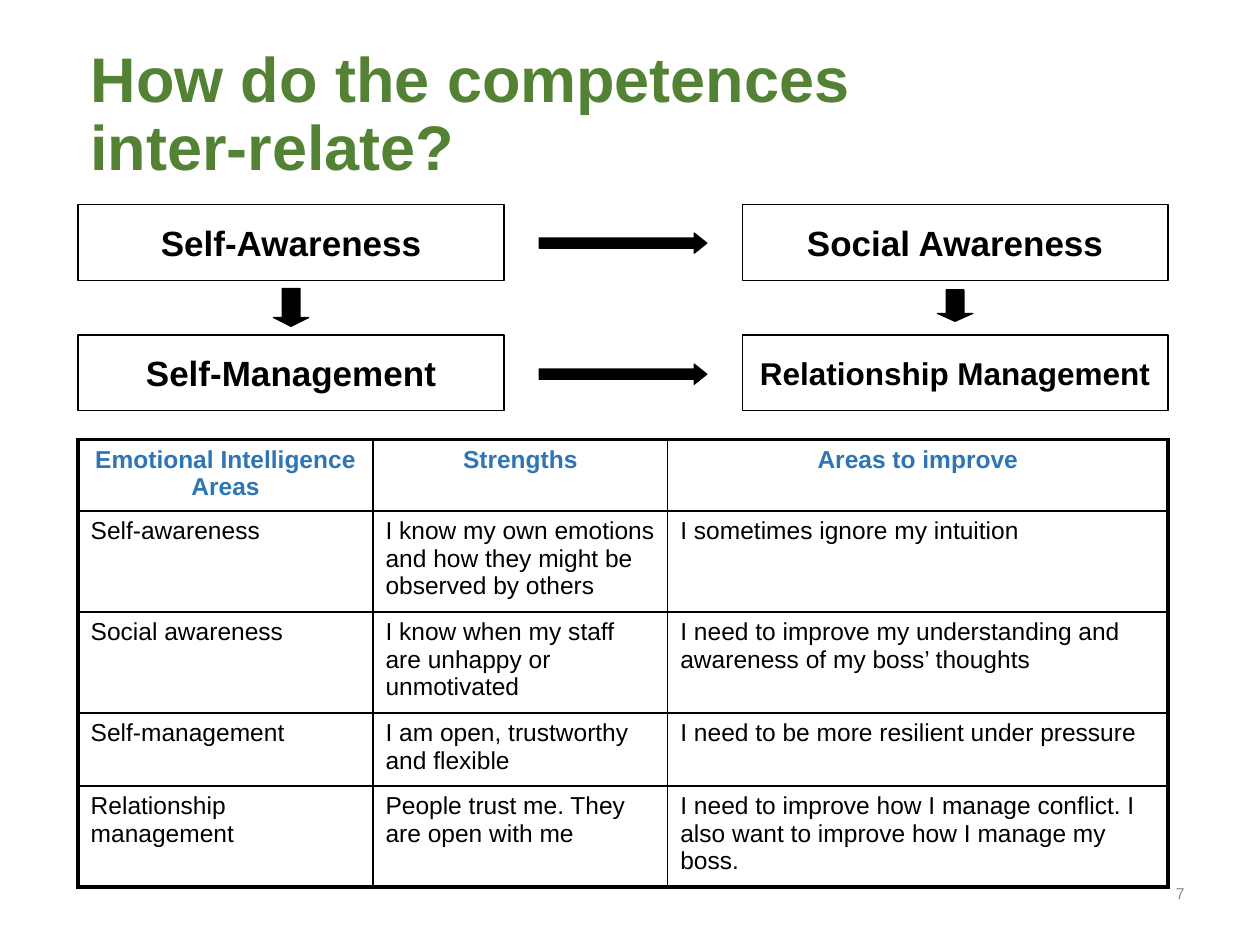
from lxml import etree
from pptx import Presentation
from pptx import util as u
from pptx.dml import color
from pptx.enum import shapes, text
from pptx.oxml import ns

deck = Presentation()
deck.slide_width, deck.slide_height = u.Inches(10), u.Inches(7.5)
page = deck.slides.add_slide(deck.slide_layouts[6])

# Grid of 100 columns by 75 rows, with square units
UNIT = deck.slide_width // 100
BLACK = "000000"
LEFT, RIGHT, BOX_WIDTH, BOX_HEIGHT = 6.2, 58.9, 33.8, 6
UPPER, LOWER = 16.25, 26.6
ALIGN = text.PP_ALIGN


def grid(*lengths):
    return [round(length * UNIT) for length in lengths]


def write(frame, words, size, tint, bold=False, align=ALIGN.LEFT):
    frame.text = words
    para = frame.paragraphs[0]
    para.alignment = align
    for span in para.runs:
        span.font.name, span.font.size, span.font.bold = "Arial", u.Pt(size), bold
        span.font.color.rgb = color.RGBColor.from_string(tint)
    return para


# Page number and title
for place, words, size, tint, bold, align, spacing in [
    ((71.7, 68.3, 23.3, 5.2), "7", 9, "8C8C8C", False, ALIGN.RIGHT, 1.0),
    ((6.2, 5.2, 68.2, 8.1), "How do the competences inter-relate?", 36, "548235", True, ALIGN.LEFT, 0.9),
]:
    box = page.shapes.add_textbox(*grid(*place))
    box.text_frame.word_wrap = True
    box.text_frame.vertical_anchor = text.MSO_ANCHOR.MIDDLE
    write(box.text_frame, words, size, tint, bold, align).line_spacing = spacing

# Competence boxes and the arrows between them
PROCESS = shapes.MSO_SHAPE.FLOWCHART_PROCESS
ACROSS, DOWN = shapes.MSO_SHAPE.RIGHT_ARROW, shapes.MSO_SHAPE.DOWN_ARROW
for kind, place, words, size in [
    (PROCESS, (LEFT, UPPER, BOX_WIDTH, BOX_HEIGHT), "Self-Awareness", 20),
    (PROCESS, (RIGHT, UPPER, BOX_WIDTH, BOX_HEIGHT), "Social Awareness", 20),
    (PROCESS, (LEFT, LOWER, BOX_WIDTH, BOX_HEIGHT), "Self-Management", 20),
    (PROCESS, (RIGHT, LOWER, BOX_WIDTH, BOX_HEIGHT), "Relationship Management", 18),
    (ACROSS, (42.8, 18.5, 13.3, 1.6), "", 0),
    (ACROSS, (42.8, 28.9, 13.3, 1.6), "", 0),
    (DOWN, (21.7, 22.9, 2.8, 3), "", 0),
    (DOWN, (74.4, 23, 2.8, 2.5), "", 0),
]:
    box = page.shapes.add_shape(kind, *grid(*place))
    box.shadow.inherit = False
    box.fill.solid()
    box.fill.fore_color.rgb = color.RGBColor.from_string("FFFFFF" if words else BLACK)
    box.line.color.rgb = color.RGBColor.from_string(BLACK)
    box.line.width = u.Pt(0.75)
    if words:
        box.text_frame.word_wrap = False
        box.text_frame.vertical_anchor = text.MSO_ANCHOR.MIDDLE
        write(box.text_frame, words, size, BLACK, True, ALIGN.CENTER)
    else:
        box.adjustments[1] = 0.625 if kind == ACROSS else 0.25

# Table of strengths and areas to improve
entries = [
    ("Emotional Intelligence Areas", "Strengths", "Areas to improve"),
    ("Self-awareness", "I know my own emotions and how they might be observed by others",
     "I sometimes ignore my intuition"),
    ("Social awareness", "I know when my staff are unhappy or unmotivated",
     "I need to improve my understanding and awareness of my boss’ thoughts"),
    ("Self-management", "I am open, trustworthy and flexible",
     "I need to be more resilient under pressure"),
    ("Relationship management", "People trust me. They are open with me",
     "I need to improve how I manage conflict. I also want to improve how I manage my boss."),
]
widths, heights = grid(23.4, 23.4, 39.7), grid(4.8, 4.2, 6.1, 5.8, 7.9)
table = page.shapes.add_table(
    len(heights), len(widths), *grid(LEFT, 34.9), sum(widths), sum(heights)).table
table.first_row = table.horz_banding = False
for column, width in zip(table.columns, widths):
    column.width = width
for row, height in zip(table.rows, heights):
    row.height = height

last_row, last_column = len(heights) - 1, len(widths) - 1
for r, row_words in enumerate(entries):
    for c, words in enumerate(row_words):
        cell = table.cell(r, c)
        if r == 0:
            write(cell.text_frame, words, 14, "2E75B6", True, ALIGN.CENTER)
        else:
            write(cell.text_frame, words, 14, BLACK)
        # Thick outer border, thin inner lines
        properties = cell._tc.get_or_add_tcPr()
        for side, outer in [("L", c == 0), ("R", c == last_column),
                            ("T", r == 0), ("B", r == last_row)]:
            edge = etree.SubElement(properties, ns.qn("a:ln" + side),
                                    w=str(u.Pt(2.25 if outer else 1)))
            paint = etree.SubElement(edge, ns.qn("a:solidFill"))
            etree.SubElement(paint, ns.qn("a:srgbClr"), val=BLACK)
        cell.fill.background()

deck.save("out.pptx")
